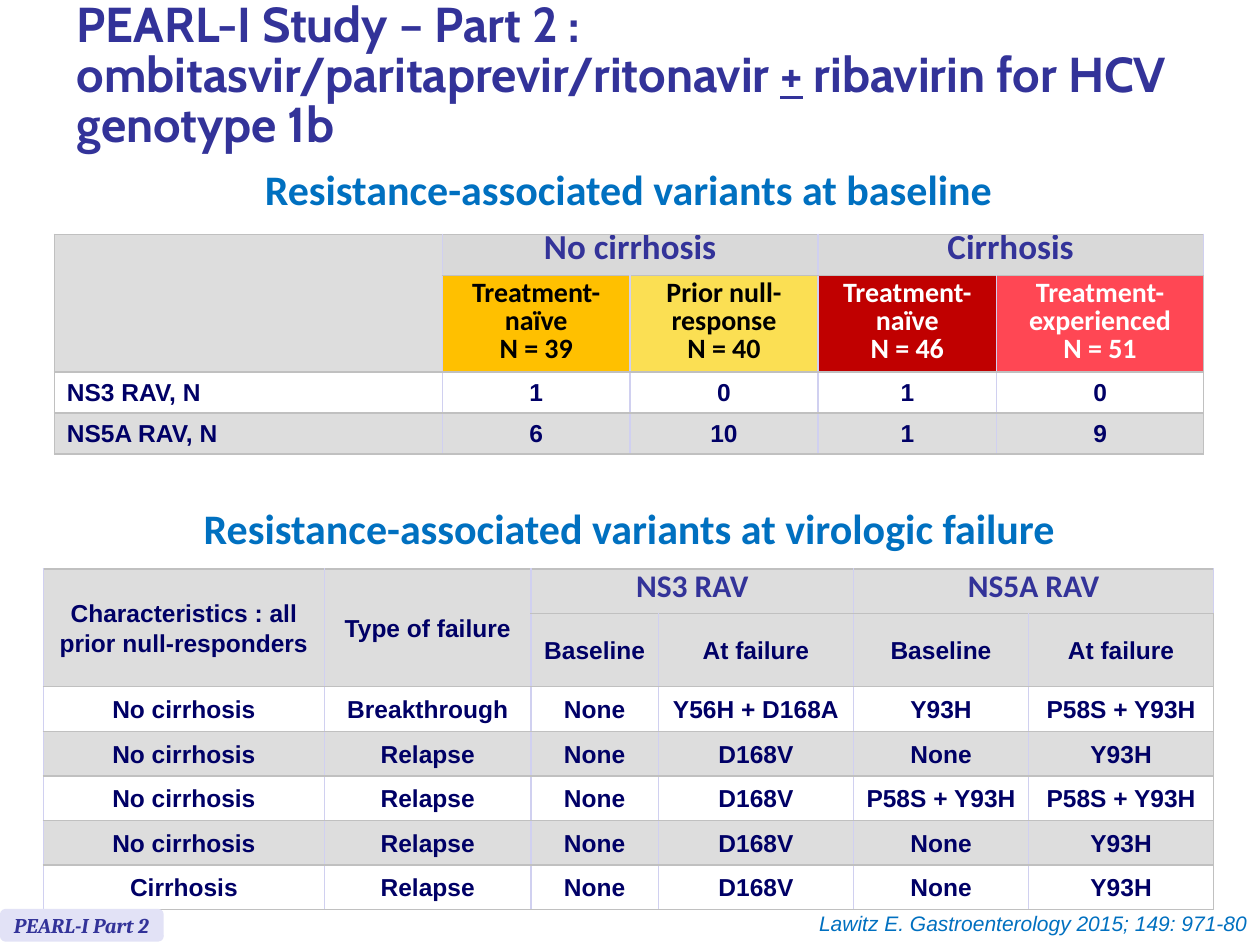
from dataclasses import dataclass

from lxml import etree
from pptx import Presentation
from pptx.dml.color import RGBColor
from pptx.enum.shapes import MSO_SHAPE
from pptx.enum.text import MSO_ANCHOR, MSO_AUTO_SIZE, PP_ALIGN
from pptx.oxml.ns import qn
from pptx.util import Pt

LEFT, CENTER, RIGHT = PP_ALIGN.LEFT, PP_ALIGN.CENTER, PP_ALIGN.RIGHT
MIDDLE, BOTTOM, TOP = MSO_ANCHOR.MIDDLE, MSO_ANCHOR.BOTTOM, MSO_ANCHOR.TOP


@dataclass(frozen=True)
class Style:
    font: str
    size: float
    color: str
    bold: bool = True
    italic: bool = False


@dataclass(frozen=True)
class Theme:
    title: Style = Style("Cabin", 28, "333399")
    heading: Style = Style("Calibri", 24, "0070C0")
    group: Style = Style("Calibri", 20, "333399")
    subgroup: Style = Style("Calibri", 18, "333399")
    dark_arm: Style = Style("Calibri", 16, "000000")
    light_arm: Style = Style("Calibri", 16, "FFFFFF")
    body: Style = Style("Arial", 14, "000066")
    citation: Style = Style("Arial", 12, "0070C0", bold=False, italic=True)
    tag: Style = Style("Cambria", 12, "333399", italic=True)
    tag_fill: str = "E2E2F6"
    white: str = "FFFFFF"
    grey: str = "DDDDDD"
    group_fill: str = "D9D9D9"
    arm_fills: tuple = ("FFC000", "FBDF53", "C00000", "FF4754")
    rule: str = "C0C0C0"
    divider: str = "D0D0F0"


THEME = Theme()

BASELINE_ROWS = [
    ["", "No cirrhosis", "", "Cirrhosis", ""],
    ["", "Treatment-naïve\nN = 39", "Prior null-response\nN = 40",
     "Treatment-naïve\nN = 46", "Treatment-experienced\nN = 51"],
    ["NS3 RAV, N", "1", "0", "1", "0"],
    ["NS5A RAV, N", "6", "10", "1", "9"],
]
FAILURE_ROWS = [
    ["Characteristics : all prior null-responders", "Type of failure",
     "NS3 RAV", "", "NS5A RAV", ""],
    ["", "", "Baseline", "At failure", "Baseline", "At failure"],
    ["No cirrhosis", "Breakthrough", "None", "Y56H + D168A", "Y93H", "P58S + Y93H"],
    ["No cirrhosis", "Relapse", "None", "D168V", "None", "Y93H"],
    ["No cirrhosis", "Relapse", "None", "D168V", "P58S + Y93H", "P58S + Y93H"],
    ["No cirrhosis", "Relapse", "None", "D168V", "None", "Y93H"],
    ["Cirrhosis", "Relapse", "None", "D168V", "None", "Y93H"],
]


def format_text(tf, style, align, spacing=None):
    for p in tf.paragraphs:
        p.alignment = align
        if spacing:
            p.line_spacing = spacing
        for r in p.runs:
            font = r.font
            font.name, font.size = style.font, Pt(style.size)
            font.bold, font.italic = style.bold, style.italic
            font.color.rgb = RGBColor.from_string(style.color)


def add_title(slide):
    title = slide.shapes.title
    title.left, title.top, title.width, title.height = Pt(36.7), Pt(5.8), Pt(657.4), Pt(77)
    tf = title.text_frame
    tf.auto_size, tf.vertical_anchor = MSO_AUTO_SIZE.NONE, MIDDLE
    p = tf.paragraphs[0]
    for text in ("PEARL-I Study – Part 2 : ombitasvir/paritaprevir/ritonavir ",
                 "+", " ribavirin for HCV genotype 1b"):
        r = p.add_run()
        r.text = text
        r.font.underline = text == "+"
    format_text(tf, THEME.title, LEFT, 0.85)


def add_label(slide, text, box, style, align, spacing=None):
    sp = slide.shapes.add_textbox(*map(Pt, box))
    tf = sp.text_frame
    tf.text = text
    tf.word_wrap = False
    format_text(tf, style, align, spacing)


def add_tag(slide, text):
    sp = slide.shapes.add_shape(MSO_SHAPE.ROUNDED_RECTANGLE, Pt(0), Pt(519.4), Pt(93.6), Pt(18.7))
    sp.shadow.inherit = False
    sp.fill.solid()
    sp.fill.fore_color.rgb = RGBColor.from_string(THEME.tag_fill)
    sp.line.fill.background()
    tf = sp.text_frame
    tf.text = text
    tf.word_wrap, tf.vertical_anchor = False, MIDDLE
    format_text(tf, THEME.tag, LEFT)


def set_borders(cell, left, right):
    tcPr = cell._tc.get_or_add_tcPr()
    sides = (("L", left), ("R", right), ("T", THEME.rule), ("B", THEME.rule))
    for side, color in sides:
        ln = etree.SubElement(tcPr, qn(f"a:ln{side}"), w=str(Pt(1)))
        fill = etree.SubElement(ln, qn("a:solidFill"))
        etree.SubElement(fill, qn("a:srgbClr"), val=color)


def add_grid(slide, rows, origin, widths, heights, merges, spacing, left_edge, look):
    """Draw a table; look(row, column) gives style, fill, alignment and anchor."""
    size = Pt(sum(widths)), Pt(sum(heights))
    table = slide.shapes.add_table(len(rows), len(widths), *map(Pt, origin), *size).table
    table.first_row = table.horz_banding = False
    for column, width in zip(table.columns, widths):
        column.width = Pt(width)
    for row, height in zip(table.rows, heights):
        row.height = Pt(height)
    last = len(widths) - 1
    for i, texts in enumerate(rows):
        for j, text in enumerate(texts):
            cell = table.cell(i, j)
            style, fill, align, anchor = look(i, j)
            set_borders(cell, THEME.divider if j else left_edge,
                        THEME.rule if j == last else THEME.divider)
            cell.fill.solid()
            cell.fill.fore_color.rgb = RGBColor.from_string(fill)
            cell.vertical_anchor = anchor
            cell.text = text
            format_text(cell.text_frame, style, align, Pt(spacing))
    for first, final in merges:
        table.cell(*first).merge(table.cell(*final))


def baseline_look(i, j):
    if i < 2 and j == 0:
        return THEME.body, THEME.grey, LEFT, MIDDLE
    if i == 0:
        return THEME.group, THEME.group_fill, CENTER, BOTTOM
    if i == 1:
        style = THEME.dark_arm if j < 3 else THEME.light_arm
        return style, THEME.arm_fills[j - 1], CENTER, MIDDLE
    fill = THEME.grey if i % 2 else THEME.white
    return THEME.body, fill, CENTER if j else LEFT, MIDDLE


def failure_look(i, j):
    style = THEME.subgroup if i == 0 and j > 1 else THEME.body
    fill = THEME.grey if i < 2 or i % 2 else THEME.white
    return style, fill, CENTER, MIDDLE


def main():
    prs = Presentation()
    prs.slide_width, prs.slide_height = Pt(720), Pt(540)
    slide = prs.slides.add_slide(prs.slide_layouts[5])

    add_title(slide)
    add_label(slide, "Resistance-associated variants at baseline",
              (141.8, 95, 434.9, 31.7), THEME.heading, CENTER, Pt(23.6))
    add_grid(slide, BASELINE_ROWS, (31, 133.9), (221.8, 107.3, 107.3, 102.2, 118.1),
             (23.4, 55.4, 23.4, 23.4),
             [((0, 0), (1, 0)), ((0, 1), (0, 2)), ((0, 3), (0, 4))],
             16, THEME.rule, baseline_look)
    add_label(slide, "Resistance-associated variants at virologic failure",
              (106.6, 288.7, 506.2, 31.7), THEME.heading, CENTER, Pt(23.6))
    add_grid(slide, FAILURE_ROWS, (24.8, 325.2), (160.6, 118.1, 72.7, 111.6, 100, 105.8),
             (25.5, 41.7) + (25.5,) * 5,
             [((0, 0), (1, 0)), ((0, 1), (1, 1)), ((0, 2), (0, 3)), ((0, 4), (0, 5))],
             17, THEME.divider, failure_look)
    add_label(slide, "Lawitz E. Gastroenterology 2015; 149: 971-80",
              (458.6, 517, 261.4, 21.6), THEME.citation, RIGHT)
    add_tag(slide, "PEARL-I Part 2")
    prs.save("out.pptx")


if __name__ == "__main__":
    main()
